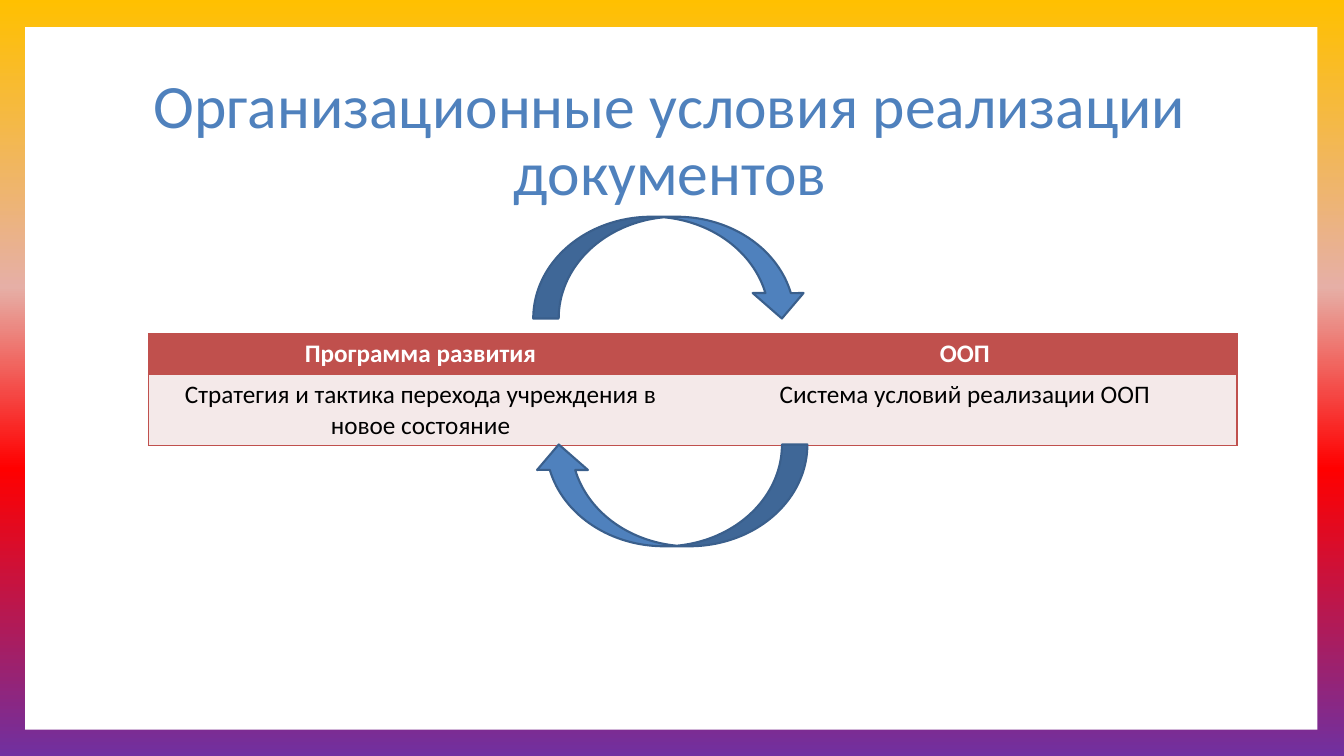
from lxml import etree
from pptx import Presentation
from pptx.dml.color import RGBColor
from pptx.enum import shapes, text
from pptx.oxml import ns
from pptx.util import Pt

WHITE = RGBColor(0xFF, 0xFF, 0xFF)
BLACK = RGBColor(0, 0, 0)
BLUE = RGBColor(0x4F, 0x81, 0xBD)
NAVY = RGBColor(0x3A, 0x5F, 0x8C)
RED = RGBColor(0xC0, 0x50, 0x4D)
PINK = RGBColor(0xF4, 0xE9, 0xE9)
STOPS = [
    (0, RGBColor(0xFF, 0xC0, 0x00)),
    (38, RGBColor(0xE6, 0xAF, 0xA6)),
    (62, RGBColor(0xFF, 0x00, 0x00)),
    (100, RGBColor(0x70, 0x30, 0xA0)),
]
PLAIN = "{2D5ABB26-0587-4C30-8999-92F81FD0307C}"
ROWS = [
    ("Программа развития", "ООП"),
    ("Стратегия и тактика перехода учреждения в новое состояние",
     "Система условий реализации ООП"),
]


def add_node(parent, tag, **attrs):
    return etree.SubElement(parent, ns.qn(tag), **attrs)


def add_color(parent, color):
    add_node(parent, "a:srgbClr", val=str(color))


def set_back(slide):
    fill = slide.background.fill
    fill.gradient()
    fill.gradient_angle = 270
    stops = next(slide.element.iter(ns.qn("a:gsLst")))
    for old in list(stops):
        stops.remove(old)
    for pos, color in STOPS:
        add_color(add_node(stops, "a:gs", pos=str(pos * 1000)), color)


def set_text(frame, words, size, color, bold=False):
    frame.word_wrap = True
    para = frame.paragraphs[0]
    para.text = words
    para.alignment = text.PP_ALIGN.CENTER
    font = para.runs[0].font
    font.name, font.size, font.bold = "Calibri", Pt(size), bold
    font.color.rgb = color
    return para


def add_shape(slide, kind, box, fill, line=None):
    shape = slide.shapes.add_shape(kind, *map(Pt, box))
    shape.shadow.inherit = False
    shape.fill.solid()
    shape.fill.fore_color.rgb = fill
    if line is None:
        shape.line.fill.background()
    else:
        shape.line.color.rgb = line
        shape.line.width = Pt(1.5)
    return shape


def add_title(slide, words, box):
    frame = slide.shapes.add_textbox(*map(Pt, box)).text_frame
    frame.vertical_anchor = text.MSO_ANCHOR.MIDDLE
    set_text(frame, words, 44, BLUE).line_spacing = 0.9


def set_edges(cell, sides):
    # Edge lines stand before the fill in the cell properties
    props = cell._tc.get_or_add_tcPr()
    for index, side in enumerate(sides):
        edge = add_node(props, "a:ln" + side, w=str(Pt(1)))
        add_color(add_node(edge, "a:solidFill"), RED)
        props.insert(index, edge)


def add_grid(slide, box, heights):
    frame = slide.shapes.add_table(len(ROWS), 2, *map(Pt, box))
    next(frame._element.iter(ns.qn("a:tableStyleId"))).text = PLAIN
    table = frame.table
    for r, row in enumerate(ROWS):
        table.rows[r].height = Pt(heights[r])
        head = r == 0
        for c, words in enumerate(row):
            cell = table.cell(r, c)
            cell.fill.solid()
            cell.fill.fore_color.rgb = RED if head else PINK
            set_text(cell.text_frame, words, 18, WHITE if head else BLACK, head)
            set_edges(cell, "LTB" if c == 0 else "RTB")


def main():
    deck = Presentation()
    deck.slide_width, deck.slide_height = Pt(960), Pt(540)
    slide = deck.slides.add_slide(deck.slide_layouts[6])

    # Gradient frame around a white panel
    set_back(slide)
    add_shape(slide, shapes.MSO_SHAPE.RECTANGLE, (18, 19.4, 923, 501.8), WHITE)

    # Title and table
    add_title(slide, "Организационные условия реализации документов",
              (90, 48.2, 777.6, 106.6))
    add_grid(slide, (106, 238.3, 777.6, 79.9), (29.2, 50.7))

    # Cycle of two arrows
    for top, turn in ((154.8, 0), (317.5, 180)):
        arrow = add_shape(slide, shapes.MSO_SHAPE.CURVED_DOWN_ARROW,
                          (380.9, top, 195.8, 72.7), BLUE, NAVY)
        arrow.rotation = turn

    deck.save("out.pptx")


if __name__ == "__main__":
    main()
